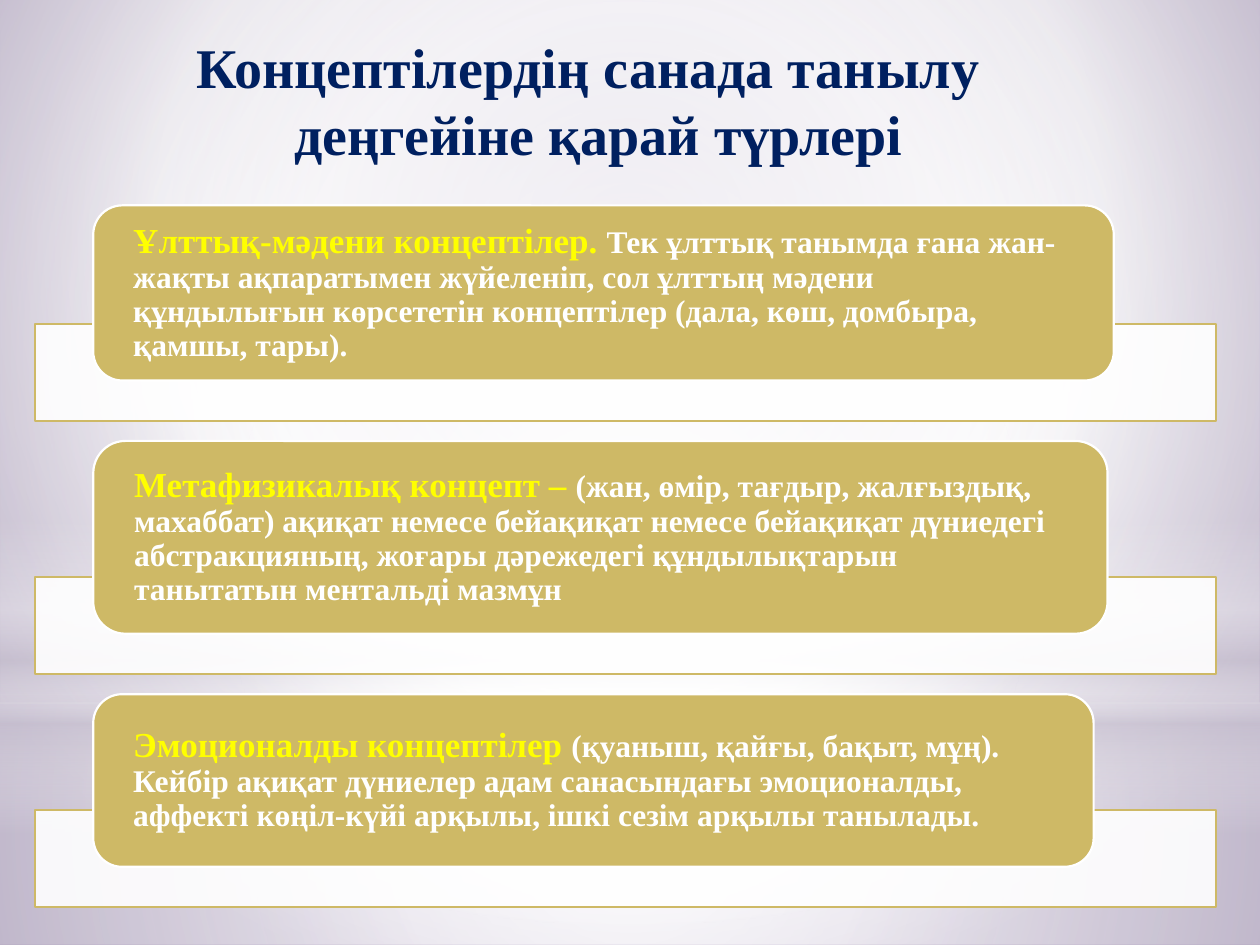
from lxml import etree
from pptx import Presentation, util as u
from pptx.dml.color import RGBColor
from pptx.enum import shapes, text
from pptx.oxml import ns

# Content: heading, explanation, card width, card height
TITLE = ["Концептілердің санада танылу", "деңгейіне қарай түрлері"]
CONCEPTS = [
    ("Ұлттық-мәдени концептілер. ",
     "Тек ұлттық танымда ғана жан-жақты ақпаратымен жүйеленіп, сол ұлттың мәдени "
     "құндылығын көрсететін концептілер (дала, көш, домбыра, қамшы, тары).", 8.1, 1.39),
    ("Метафизикалық концепт – ",
     "(жан, өмір, тағдыр, жалғыздық, махаббат) ақиқат немесе бейақиқат немесе бейақиқат "
     "дүниедегі абстракцияның, жоғары дәрежедегі құндылықтарын танытатын ментальді мазмұн",
     8.05, 1.53),
    ("Эмоционалды концептілер ",
     "(қуаныш, қайғы, бақыт, мұң). Кейбір ақиқат дүниелер адам санасындағы эмоционалды, "
     "аффекті көңіл-күйі арқылы, ішкі сезім арқылы танылады.", 7.94, 1.37),
]

THEME = {
    "font": "Times New Roman",
    "navy": "002060", "gold": "CEB966", "yellow": "FFFF00", "white": "FFFFFF",
    "title": 32, "heading": 20, "body": 18, "line": 1.25,
}
WIDTH, HEIGHT = 10, 7.5

# Gradients: stops are (position, colour, opacity), all in percent
CENTRE = (50, 50, 50, 50)
BACKDROP = [(0, "C1B7CD", 100), (60, "FFFFFF", 100), (100, "A191B5", 100)]
RECT, OVAL = shapes.MSO_SHAPE.RECTANGLE, shapes.MSO_SHAPE.OVAL
GLOWS = [  # preset, top, height, stops, focus (None: top to bottom)
    (RECT, 5.58, 1.92, [(0, "FFFFFF", 91), (37, "FFFFFF", 76), (100, "C9C2D1", 79)], CENTRE),
    (RECT, 0, 5.58, [(0, "FFFFFF", 89), (48, "FFFFFF", 62), (100, "C9C2D1", 79)], CENTRE),
    (RECT, 4.12, 2.5, [(0, "FFFFFF", 0), (29, "FFFFFF", 30), (45, "C9C2D1", 40),
                       (55, "FFFFFF", 26), (65, "C9C2D1", 60), (100, "FFFFFF", 0)], None),
    (OVAL, 1.75, 5.58, [(0, "FFFFFF", 100), (56, "FFFFFF", 0)], CENTRE),
]


def add(parent, tag, **attributes):
    return etree.SubElement(parent, ns.qn(tag), {k: str(v) for k, v in attributes.items()})


def set_alpha(colour, opacity):
    if opacity < 100:
        add(colour, "a:alpha", val=opacity * 1000)


def set_gradient(fill, owner, stops, focus):
    fill.gradient()
    gradient = owner.find(".//" + ns.qn("a:gradFill"))
    for child in list(gradient):
        gradient.remove(child)
    stop_list = add(gradient, "a:gsLst")
    for position, colour, opacity in stops:
        stop = add(stop_list, "a:gs", pos=position * 1000)
        set_alpha(add(stop, "a:srgbClr", val=colour), opacity)
    if focus:
        circle = add(gradient, "a:path", path="circle")
        add(circle, "a:fillToRect", **{side: share * 1000 for side, share in zip("ltrb", focus)})
    else:
        add(gradient, "a:lin", ang=90 * 60000, scaled=0)


def add_shape(preset, left, top, width, height, fill=None, line=None):
    shape = slide.shapes.add_shape(preset, *map(u.Inches, (left, top, width, height)))
    shape.shadow.inherit = False
    if fill:
        shape.fill.solid()
        shape.fill.fore_color.rgb = RGBColor.from_string(THEME[fill])
    if line:
        shape.line.color.rgb = RGBColor.from_string(THEME[line])
        shape.line.width = u.Pt(THEME["line"])
    else:
        shape.line.fill.background()
    return shape


def style(run, size, colour):
    run.font.name = THEME["font"]
    run.font.size = u.Pt(THEME[size])
    run.font.bold = True
    run.font.color.rgb = RGBColor.from_string(THEME[colour])


deck = Presentation()
deck.slide_width, deck.slide_height = u.Inches(WIDTH), u.Inches(HEIGHT)
slide = deck.slides.add_slide(deck.slide_layouts[6])

# Backdrop
set_gradient(slide.background.fill, slide._element, BACKDROP, (20, 10, 20, 60))
for preset, top, height, stops, focus in GLOWS:
    glow = add_shape(preset, 0, top, WIDTH, height)
    set_gradient(glow.fill, glow._element, stops, focus)

# Title, second line indented
title = slide.shapes.add_textbox(*map(u.Inches, (1.46, 0.21, 7.4, 1.18))).text_frame
title.word_wrap = True
title.text = "\n".join(TITLE)
for paragraph in title.paragraphs:
    style(paragraph.runs[0], "title", "navy")
title.paragraphs[1]._p.get_or_add_pPr().set("marL", str(u.Inches(0.78)))

# Concept cards, each overlapping the bar behind its lower edge
BAR_LEFT, BAR_WIDTH, BAR_HEIGHT = 0.28, 9.37, 0.77
CARD_LEFT, OVERLAP, GAP = 0.74, 0.45, 0.16
top = 1.63
for heading, explanation, width, height in CONCEPTS:
    bar_top = top + height - OVERLAP
    bar = add_shape(RECT, BAR_LEFT, bar_top, BAR_WIDTH, BAR_HEIGHT, "white", "gold")
    set_alpha(bar._element.spPr.find(ns.qn("a:solidFill"))[0], 90)

    card = add_shape(shapes.MSO_SHAPE.ROUNDED_RECTANGLE, CARD_LEFT, top, width, height,
                     "gold", "white")
    frame = card.text_frame
    frame.word_wrap = True
    frame.vertical_anchor = text.MSO_ANCHOR.MIDDLE
    frame.margin_left = frame.margin_right = u.Inches(0.25)
    frame.margin_top = frame.margin_bottom = 0
    paragraph = frame.paragraphs[0]
    paragraph.alignment = text.PP_ALIGN.LEFT
    paragraph.line_spacing = 0.9
    for words, size, colour in ((heading, "heading", "yellow"), (explanation, "body", "white")):
        run = paragraph.add_run()
        run.text = words
        style(run, size, colour)
    top = bar_top + BAR_HEIGHT + GAP

deck.save("out.pptx")
